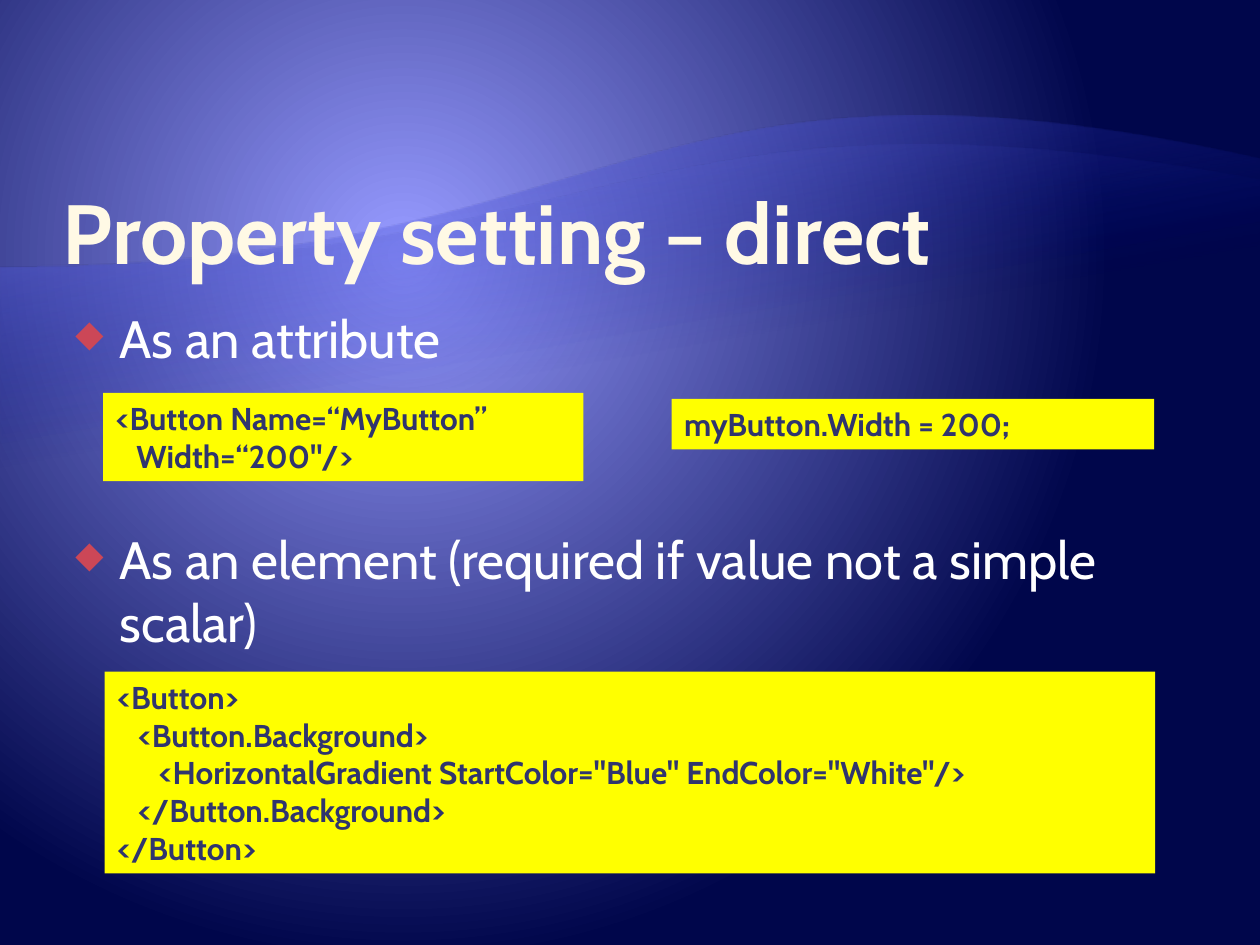
import pptx
import pptx.dml.color
import pptx.enum.shapes
import pptx.enum.text
import pptx.oxml
import pptx.oxml.ns
import pptx.util

Cm, Pt = pptx.util.Cm, pptx.util.Pt
Kind = pptx.enum.shapes.MSO_SHAPE
Anchor = pptx.enum.text.MSO_ANCHOR
qn = pptx.oxml.ns.qn

FONT = "Cabin"
CREAM, WHITE, NAVY, YELLOW, RED = "FFF9E5", "FFFFFF", "30356E", "FFFF00", "CC4757"
STEP = 0.42  # code indent per level, cm

TITLE = "Property setting – direct"
# text, space before in points
POINTS = [
    ("As an attribute", 0),
    ("As an element (required if value not a simple scalar)", 90),
]
# box in cm, then lines as (level, text)
CODES = [
    ((2.08, 7.92, 9.68, 1.78), [
        (0, "<Button Name=“MyButton”"),
        (1, "Width=“200\"/>"),
    ]),
    ((13.54, 8.04, 9.73, 1.02), [(0, "myButton.Width = 200;")]),
    ((2.11, 13.54, 21.18, 4.07), [
        (0, "<Button>"),
        (1, "<Button.Background>"),
        (2, "<HorizontalGradient StartColor=\"Blue\" EndColor=\"White\"/>"),
        (1, "</Button.Background>"),
        (0, "</Button>"),
    ]),
]
# stops are (position, colour, opacity), all in percent
GLOW = [(0, "969AFF", 100), (1, "969AFF", 100), (90, "00064B", 100)]
HALO = '<a:path path="circle"><a:fillToRect l="100000" t="100000" r="135000" b="145000"/></a:path>'
SLANT = '<a:lin ang="4800000" scaled="0"/>'
WAVES = [
    ((0, 2.13, 25.4, 16.48), [(65, "000D9E", 0), (100, "797FFF", 55)]),
    ((0, 2.74, 25.4, 13.41), [(65, "000D9E", 0), (100, "A3A7FF", 30)]),
]


def rgb(hex):
    return pptx.dml.color.RGBColor.from_string(hex)


def blend(solid, stops, way):
    """Replace a solidFill element by a gradient."""
    marks = "".join(
        f'<a:gs pos="{pos * 1000}"><a:srgbClr val="{hex}">'
        f'<a:alpha val="{alpha * 1000}"/></a:srgbClr></a:gs>'
        for pos, hex, alpha in stops)
    grad = pptx.oxml.parse_xml(
        f'<a:gradFill {pptx.oxml.ns.nsdecls("a")} rotWithShape="1">'
        f'<a:gsLst>{marks}</a:gsLst>{way}</a:gradFill>')
    solid.getparent().replace(solid, grad)


def shape(slide, kind, box, hex):
    item = slide.shapes.add_shape(kind, *map(Cm, box))
    item.shadow.inherit = False
    item.fill.solid()
    item.fill.fore_color.rgb = rgb(hex)
    item.line.fill.background()
    return item


def frame(item, anchor=Anchor.TOP):
    text = item.text_frame
    text.word_wrap = True
    text.vertical_anchor = anchor
    return text


def write(para, text, size, hex, bold=False):
    para.alignment = pptx.enum.text.PP_ALIGN.LEFT
    run = para.add_run()
    run.text = text
    run.font.name = FONT
    run.font.size = Pt(size)
    run.font.bold = bold
    run.font.color.rgb = rgb(hex)


def paras(text, count):
    """Give the frame as many paragraphs as asked."""
    return [text.paragraphs[0]] + [text.add_paragraph() for _ in range(count - 1)]


def bullet(para):
    props = para._p.get_or_add_pPr()
    props.set("marL", str(Cm(0.89)))
    props.set("indent", str(-Cm(0.89)))
    for part in (f'buClr {{}}><a:srgbClr val="{RED}"/></a:buClr',
                 'buSzPct {} val="70000"/', 'buChar {} char="◆"/'):
        props.append(pptx.oxml.parse_xml(f"<a:{part.format(pptx.oxml.ns.nsdecls('a'))}>"))


def main():
    deck = pptx.Presentation()
    deck.slide_width, deck.slide_height = Cm(25.4), Cm(19.05)
    slide = deck.slides.add_slide(deck.slide_layouts[6])

    slide.background.fill.solid()
    blend(slide.element.find(".//" + qn("p:bgPr")).find(qn("a:solidFill")), GLOW, HALO)
    for box, stops in WAVES:
        wave = shape(slide, Kind.FLOWCHART_DOCUMENT, box, stops[0][1])
        wave.rotation = 180
        blend(wave.element.spPr.find(qn("a:solidFill")), stops, SLANT)

    title = frame(slide.shapes.add_textbox(Cm(1.27), Cm(2.54), Cm(22.86), Cm(3.17)), Anchor.BOTTOM)
    title.margin_left = title.margin_right = 0
    title.margin_top = title.margin_bottom = Cm(0.03)
    write(title.paragraphs[0], TITLE, 48, CREAM, True)

    body = frame(slide.shapes.add_textbox(Cm(1.27), Cm(6.05), Cm(22.86), Cm(11.43)))
    for para, (text, gap) in zip(paras(body, len(POINTS)), POINTS):
        para.space_before = Pt(gap)
        bullet(para)
        write(para, text, 30, WHITE)

    for box, lines in CODES:
        code = frame(shape(slide, Kind.RECTANGLE, box, YELLOW))
        for para, (level, text) in zip(paras(code, len(lines)), lines):
            para._p.get_or_add_pPr().set("marL", str(Cm(STEP * level)))
            write(para, text, 18, NAVY, True)

    deck.save("out.pptx")


if __name__ == "__main__":
    main()
